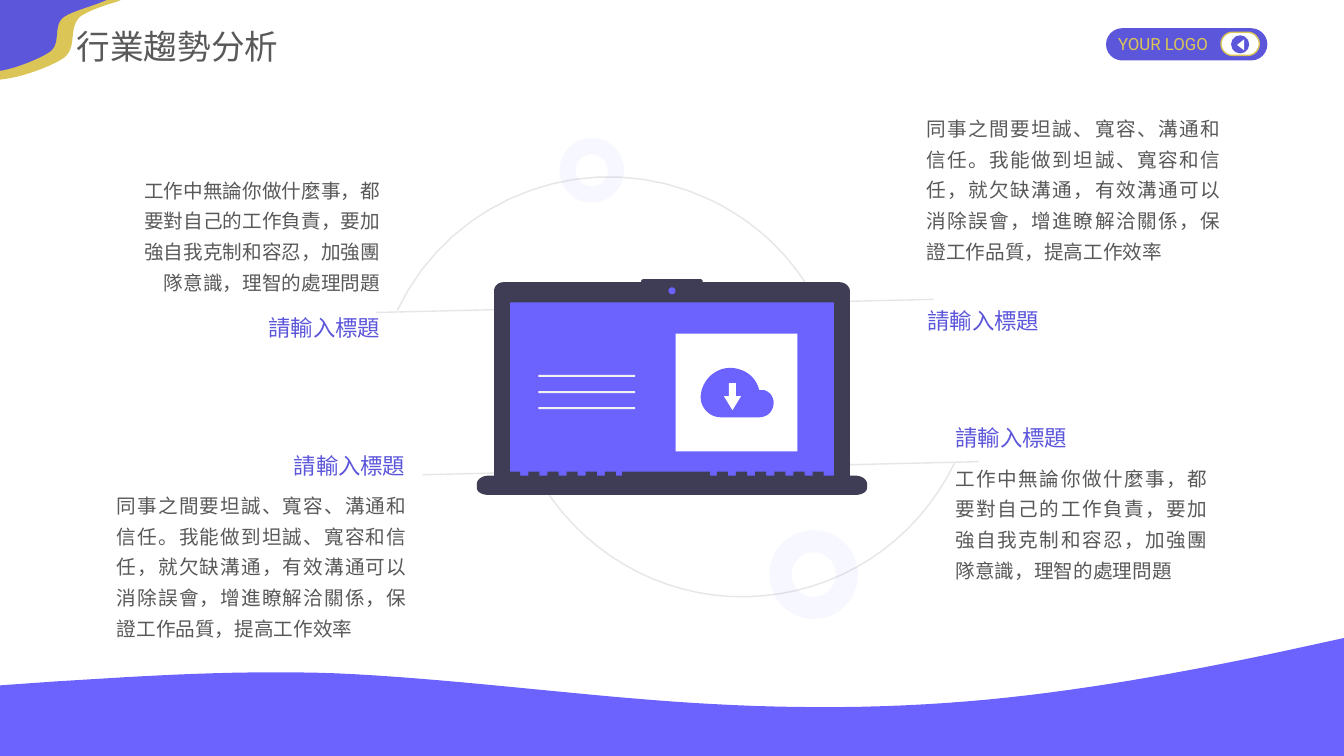
import pptx
import pptx.util
import pptx.dml.color
import pptx.enum.shapes
import pptx.enum.text
import pptx.oxml
import pptx.oxml.ns

Inches = pptx.util.Inches
RGBColor = pptx.dml.color.RGBColor
SHAPE = pptx.enum.shapes.MSO_SHAPE
ALIGN = pptx.enum.text.PP_ALIGN

VIOLET = RGBColor(0x6C, 0x63, 0xFF)
INDIGO = RGBColor(0x5C, 0x56, 0xDB)
PALE_VIOLET = RGBColor(0x83, 0x7D, 0xFF)
GOLD = RGBColor(0xDB, 0xC5, 0x56)
DARK = RGBColor(0x3F, 0x3D, 0x56)
TEXT_GRAY = RGBColor(0x59, 0x59, 0x59)
LINE_GRAY = RGBColor(0xE6, 0xE6, 0xE6)
OFF_WHITE = RGBColor(0xF2, 0xF2, 0xF2)
WHITE = RGBColor(0xFF, 0xFF, 0xFF)

deck = pptx.Presentation()
deck.slide_width, deck.slide_height = Inches(13.33), Inches(7.5)
page = deck.slides.add_slide(deck.slide_layouts[5])


def add_text(text, left, top, width, height, size=14, font="Roboto", color=TEXT_GRAY,
             align=ALIGN.LEFT, line_height=None, box=None):
    if box is None:
        box = page.shapes.add_textbox(0, 0, 0, 0)
    box.left, box.top = Inches(left), Inches(top)
    box.width, box.height = Inches(width), Inches(height)
    frame = box.text_frame
    frame.word_wrap = True
    frame.auto_size = pptx.enum.text.MSO_AUTO_SIZE.NONE
    frame.vertical_anchor = pptx.enum.text.MSO_ANCHOR.TOP
    para = frame.paragraphs[0]
    para.alignment = align
    if line_height:
        para.line_spacing = pptx.util.Pt(line_height)
    span = para.add_run()
    span.text = text
    span.font.size = pptx.util.Pt(size)
    span.font.name = font
    span.font.color.rgb = color
    east_asian = pptx.oxml.parse_xml(
        '<a:ea xmlns:a="http://schemas.openxmlformats.org/drawingml/2006/main"'
        ' typeface="Noto Sans CJK SC"/>')
    span.font._element.find(pptx.oxml.ns.qn("a:latin")).addnext(east_asian)


def add_outline(steps, fill=None, line=None):
    """A step of two numbers is a corner; a step of six is a Bézier curve."""
    points = [steps[0]]
    for step in steps[1:]:
        if len(step) == 2:
            points.append(step)
            continue
        curve = (points[-1], step[:2], step[2:4], step[4:])
        for i in range(1, 17):
            t = i / 16
            weights = ((1 - t) ** 3, 3 * t * (1 - t) ** 2, 3 * t * t * (1 - t), t ** 3)
            points.append(tuple(sum(w * p[axis] for w, p in zip(weights, curve))
                                for axis in (0, 1)))
    corners = [(Inches(x), Inches(y)) for x, y in points]
    builder = page.shapes.build_freeform(*corners[0])
    builder.add_line_segments(corners[1:], close=fill is not None)
    shape = builder.convert_to_shape()
    shape.shadow.inherit = False
    if fill is None:
        shape.fill.background()
        shape.line.color.rgb = line
        shape.line.width = pptx.util.Pt(1)
    else:
        shape.fill.solid()
        shape.fill.fore_color.rgb = fill
        shape.line.fill.background()


# Orbit arcs and the two slanted lines behind the laptop
add_outline([(3.94, 3.08), (4.49, 1.92, 5.88, 1.43, 7.04, 1.98),
             (7.5, 2.2, 7.87, 2.55, 8.1, 3)], line=LINE_GRAY)
add_outline([(5.31, 4.69), (5.73, 5.46, 6.54, 5.94, 7.41, 5.92),
             (8.31, 5.9, 9.09, 5.38, 9.47, 4.59)], line=LINE_GRAY)
for x1, y1, x2, y2 in ((3.73, 3.1, 9.26, 2.97), (4.19, 4.71, 9.71, 4.58)):
    slant = page.shapes.add_connector(pptx.enum.shapes.MSO_CONNECTOR.STRAIGHT,
                                      Inches(x1), Inches(y1), Inches(x2), Inches(y2))
    slant.line.color.rgb = LINE_GRAY
    slant.line.width = pptx.util.Pt(1)
    slant._element.spPr.append(pptx.oxml.parse_xml(
        '<a:effectLst xmlns:a="http://schemas.openxmlformats.org/drawingml/2006/main"/>'))

# Laptop lid
add_outline([(8.33, 2.8), (6.97, 2.8), (6.97, 2.79), (6.97, 2.78, 6.96, 2.77, 6.95, 2.77),
             (6.38, 2.77), (6.37, 2.77, 6.36, 2.78, 6.36, 2.79), (6.36, 2.8), (4.99, 2.8),
             (4.94, 2.8, 4.9, 2.84, 4.9, 2.89), (4.9, 4.75),
             (4.9, 4.81, 4.94, 4.85, 4.99, 4.85), (8.33, 4.85),
             (8.38, 4.85, 8.43, 4.81, 8.43, 4.75), (8.43, 2.89),
             (8.43, 2.84, 8.38, 2.8, 8.33, 2.8)], fill=DARK)

# Screen, camera, text lines, card, header pill and rings
pill_shapes = [
    (SHAPE.ROUNDED_RECTANGLE, 10.97, 0.28, 1.6, 0.32, INDIGO, [0.5]),
    (SHAPE.ROUNDED_RECTANGLE, 12.11, 0.32, 0.38, 0.23, WHITE, [0.5]),
    (SHAPE.OVAL, 12.21, 0.35, 0.18, 0.18, INDIGO, []),
    (SHAPE.ISOSCELES_TRIANGLE, 12.25, 0.41, 0.11, 0.07, WHITE, []),
]
screen_shapes = [
    (SHAPE.RECTANGLE, 5.06, 3, 3.21, 1.78, VIOLET, []),
    (SHAPE.OVAL, 6.63, 2.85, 0.07, 0.07, VIOLET, []),
    *[(SHAPE.RECTANGLE, 5.34, 3.72 + 0.16 * row, 0.96, 0.02, OFF_WHITE, []) for row in range(3)],
    (SHAPE.RECTANGLE, 6.7, 3.31, 1.21, 1.17, WHITE, []),
]
rings = [
    (SHAPE.DONUT, 7.63, 5.26, 0.88, 0.88, PALE_VIOLET, [0.25]),
    (SHAPE.DONUT, 5.55, 1.37, 0.64, 0.64, PALE_VIOLET, [0.25]),
]
arrow = (SHAPE.DOWN_ARROW, 7.18, 3.8, 0.17, 0.27, WHITE, [0.41, 0.82])
for kind, left, top, width, height, color, adjustments in [
        *screen_shapes, arrow, *pill_shapes, *rings]:
    if kind == SHAPE.DOWN_ARROW:
        # The cloud lies between the card and its arrow
        add_outline([(6.95, 3.93), (6.96, 3.77, 7.1, 3.64, 7.26, 3.65),
                     (7.39, 3.66, 7.5, 3.74, 7.53, 3.87), (7.55, 3.87, 7.57, 3.87, 7.58, 3.87),
                     (7.73, 3.92, 7.69, 4.14, 7.53, 4.14), (7.15, 4.14),
                     (7.04, 4.14, 6.95, 4.05, 6.95, 3.94)], fill=VIOLET)
    shape = page.shapes.add_shape(kind, Inches(left), Inches(top), Inches(width), Inches(height))
    shape.shadow.inherit = False
    shape.fill.solid()
    shape.fill.fore_color.rgb = color
    shape.line.fill.background()
    for i, value in enumerate(adjustments):
        shape.adjustments[i] = value
    if kind == SHAPE.ISOSCELES_TRIANGLE:
        shape.rotation = 270
    elif kind == SHAPE.ROUNDED_RECTANGLE and color == WHITE:
        shape.line.color.rgb = GOLD
        shape.line.width = pptx.util.Pt(1)
    elif kind == SHAPE.DONUT:
        tint = shape._element.spPr.find(".//" + pptx.oxml.ns.qn("a:srgbClr"))
        tint.append(pptx.oxml.parse_xml(
            '<a:alpha xmlns:a="http://schemas.openxmlformats.org/drawingml/2006/main"'
            ' val="6000"/>'))

# Laptop base with its row of teeth; the middle one is wide
TOOTH_STEP, TOOTH_WIDTH = 0.19, 0.11
teeth = [(5.05 + TOOTH_STEP * i, 5.05 + TOOTH_STEP * i + TOOTH_WIDTH) for i in range(6)]
teeth += [(6.17, 7.04)]
teeth += [(7.11 + TOOTH_STEP * i, 7.11 + TOOTH_STEP * i + TOOTH_WIDTH) for i in range(6)]
teeth_corners = [corner for left, right in teeth
                 for corner in ((left, 4.72), (left, 4.68), (right, 4.68), (right, 4.72))]
add_outline([(4.84, 4.72), *teeth_corners, (8.49, 4.72), (8.55, 4.72, 8.6, 4.76, 8.6, 4.8),
             (8.6, 4.84), (8.6, 4.88, 8.55, 4.91, 8.49, 4.91), (4.84, 4.91),
             (4.78, 4.91, 4.73, 4.88, 4.73, 4.84), (4.73, 4.8),
             (4.73, 4.76, 4.78, 4.72, 4.84, 4.72)], fill=DARK)

# Corner ribbon and bottom wave
add_outline([(0, 0), (1.2, 0), (1.15, 0.02), (1.01, 0.06, 0.85, 0.12, 0.79, 0.17),
             (0.67, 0.29, 0.78, 0.49, 0.61, 0.59), (0.51, 0.65, 0.27, 0.75, 0.07, 0.78),
             (0, 0.79)], fill=GOLD)
add_outline([(0, 0), (1.06, 0), (1.01, 0.02), (0.89, 0.07, 0.69, 0.12, 0.62, 0.18),
             (0.52, 0.28, 0.62, 0.45, 0.47, 0.53), (0.39, 0.58, 0.18, 0.67, 0.02, 0.7),
             (0, 0.7)], fill=INDIGO)
add_outline([(0, 6.8), (0.56, 6.76), (1.11, 6.73, 2.22, 6.64, 3.33, 6.68),
             (4.44, 6.73, 5.56, 6.88, 6.67, 6.96), (7.78, 7.04, 8.89, 7.04, 10, 6.92),
             (11.11, 6.8, 12.22, 6.57, 12.78, 6.45), (13.33, 6.33), (13.33, 7.5), (0, 7.5)],
            fill=VIOLET)

# Title and header label
add_text("行業趨勢分析", 0.66, 0.2, 2.4, 0.5, size=24, font="Noto Sans CJK SC",
         line_height=29.5, box=page.shapes.title)
add_text("YOUR LOGO", 10.99, 0.29, 1.12, 0.3, size=12, color=GOLD)

# Four headings, each with its paragraph
WORK = "工作中無論你做什麼事，都要對自己的工作負責，要加強自我克制和容忍，加強團隊意識，理智的處理問題"
TEAM = ("同事之間要坦誠、寬容、溝通和信任。我能做到坦誠、寬容和信任，就欠缺溝通，"
        "有效溝通可以消除誤會，增進瞭解洽關係，保證工作品質，提高工作效率")
for left, top, align in ((9.38, 4.15, ALIGN.LEFT), (2.48, 4.43, ALIGN.RIGHT),
                         (2.23, 3.06, ALIGN.RIGHT), (9.1, 2.99, ALIGN.LEFT)):
    add_text("請輸入標題", left, top, 1.64, 0.37, size=16, font="Noto Sans CJK SC",
             color=INDIGO, align=align, line_height=19.5)
for text, left, top, width, height, align in (
        (WORK, 9.38, 4.51, 2.69, 1.32, ALIGN.JUSTIFY), (WORK, 1.17, 1.65, 2.7, 1.32, ALIGN.RIGHT),
        (TEAM, 1.06, 4.78, 3.07, 1.63, ALIGN.JUSTIFY), (TEAM, 9.09, 1.04, 3.11, 1.63, ALIGN.JUSTIFY)):
    add_text(text, left, top, width, height, align=align, line_height=21.9)

deck.save("out.pptx")
